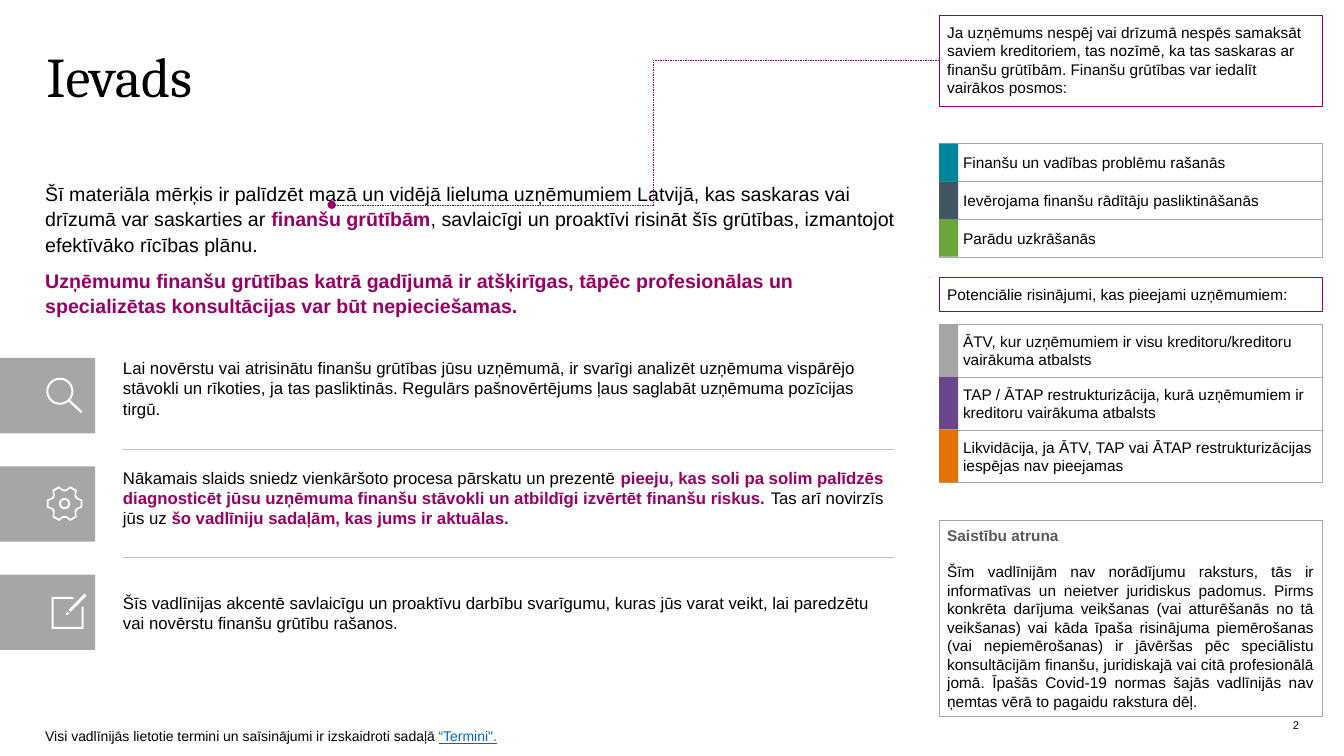
from dataclasses import dataclass
from math import cos, radians, sin

from lxml import etree
from pptx import Presentation
from pptx import util as u
from pptx.dml.color import RGBColor
from pptx.enum import dml, shapes, text
from pptx.oxml import ns
from pptx.util import Cm


@dataclass(frozen=True)
class Theme:
    heading: str = "Cambria"
    body: str = "Arial"
    black: str = "000000"
    white: str = "FFFFFF"
    accent: str = "990066"
    link: str = "0563C1"
    muted: str = "595959"
    tile: str = "A6A6A6"
    rule: str = "BFBFBF"
    title_size: float = 40
    lead_size: float = 14
    row_size: float = 12
    side_size: float = 11
    foot_size: float = 10
    number_size: float = 8
    hairline: float = 0.25


THEME = Theme()
SIDE_LEFT, SIDE_WIDTH, STRIP_WIDTH = 23.67, 9.65, 0.48
ROW_TOP, ROW_PITCH, TILE_WIDTH, TILE_HEIGHT = 9.02, 2.73, 2.4, 1.9
ROW_LEFT, ROW_WIDTH = 3.1, 19.43

STAGES = [
    ("Finanšu un vadības problēmu rašanās", "01859C"),
    ("Ievērojama finanšu rādītāju pasliktināšanās", "425563"),
    ("Parādu uzkrāšanās", "6BA439"),
]
SOLUTIONS = [
    ("ĀTV, kur uzņēmumiem ir visu kreditoru/kreditoru vairākuma atbalsts", "A5A5A5"),
    ("TAP / ĀTAP restrukturizācija, kurā uzņēmumiem ir kreditoru vairākuma atbalsts", "68478C"),
    ("Likvidācija, ja ĀTV, TAP vai ĀTAP restrukturizācijas iespējas nav pieejamas", "E57100"),
]
# Asterisks enclose emphasised words
LEAD = [
    "Šī materiāla mērķis ir palīdzēt mazā un vidējā lieluma uzņēmumiem Latvijā, kas saskaras vai "
    "drīzumā var saskarties ar *finanšu grūtībām*, savlaicīgi un proaktīvi risināt šīs grūtības, "
    "izmantojot efektīvāko rīcības plānu.",
    "*Uzņēmumu finanšu grūtības katrā gadījumā ir atšķirīgas, tāpēc profesionālas un "
    "specializētas konsultācijas var būt nepieciešamas.*",
]
ROWS = [  # text, top, height
    ("Lai novērstu vai atrisinātu finanšu grūtības jūsu uzņēmumā, ir svarīgi analizēt uzņēmuma "
     "vispārējo stāvokli un rīkoties, ja tas pasliktinās. Regulārs pašnovērtējums ļaus saglabāt "
     "uzņēmuma pozīcijas tirgū.", 9.02, 1.55),
    ("Nākamais slaids sniedz vienkāršoto procesa pārskatu un prezentē *pieeju, kas soli pa solim "
     "palīdzēs diagnosticēt jūsu uzņēmuma finanšu stāvokli un atbildīgi izvērtēt finanšu riskus. *"
     "Tas arī novirzīs jūs uz *šo vadlīniju sadaļām, kas jums ir aktuālas.*", 11.79, 1.55),
    ("Šīs vadlīnijas akcentē savlaicīgu un proaktīvu darbību svarīgumu, kuras jūs varat veikt, "
     "lai paredzētu vai novērstu finanšu grūtību rašanos.", 14.94, 1.02),
]
DISCLAIMER = [
    "*Saistību atruna*",
    "Šīm vadlīnijām nav norādījumu raksturs, tās ir informatīvas un neietver juridiskus padomus. "
    "Pirms konkrēta darījuma veikšanas (vai atturēšanās no tā veikšanas) vai kāda īpaša risinājuma "
    "piemērošanas (vai nepiemērošanas) ir jāvēršas pēc speciālistu konsultācijām finanšu, "
    "juridiskajā vai citā profesionālā jomā. Īpašās Covid-19 normas šajās vadlīnijās nav ņemtas "
    "vērā to pagaidu rakstura dēļ.",
]


def colour(code):
    return RGBColor.from_string(code)


def write(box, paragraphs, size, margins=(0, 0, 0, 0), anchor="TOP", align="LEFT", spacing=1.0,
          gap=0, font=THEME.body, mark=THEME.accent, bold=True, underline=False):
    """Fill a box; the words between asterisks take the mark colour."""
    frame = box.text_frame
    frame.word_wrap = True
    frame.vertical_anchor = text.MSO_ANCHOR[anchor]
    frame.margin_left, frame.margin_top, frame.margin_right, frame.margin_bottom = map(Cm, margins)
    for index, content in enumerate(paragraphs):
        para = frame.add_paragraph() if index else frame.paragraphs[0]
        para.alignment = text.PP_ALIGN[align]
        para.line_spacing = spacing
        para.space_before = u.Pt(gap if index else 0)
        for order, words in enumerate(content.split("*")):
            if not words:
                continue
            marked = order % 2 == 1
            span = para.add_run()
            span.text = words
            span.font.name, span.font.size = font, u.Pt(size)
            span.font.bold = marked and bold
            span.font.underline = marked and underline
            span.font.color.rgb = colour(mark if marked else THEME.black)


def add_text(page, left, top, width, height, paragraphs, size, **style):
    box = page.shapes.add_textbox(Cm(left), Cm(top), Cm(width), Cm(height))
    write(box, paragraphs, size, **style)


def paint(shape, fill):
    shape.shadow.inherit = False
    shape.fill.solid()
    shape.fill.fore_color.rgb = colour(fill)
    shape.line.fill.background()


def add_block(page, left, top, width, height, fill):
    block = page.shapes.add_shape(shapes.MSO_SHAPE.RECTANGLE, Cm(left), Cm(top), Cm(width), Cm(height))
    paint(block, fill)
    return block


def add_panel(page, top, height, border, paragraphs, margins=(0.2, 0.2, 0.2, 0.2), **style):
    panel = add_block(page, SIDE_LEFT, top, SIDE_WIDTH, height, THEME.white)
    white = panel.element.spPr.find(ns.qn("a:solidFill"))[0]
    etree.SubElement(white, ns.qn("a:alpha"), val="80000")
    panel.line.color.rgb = colour(border)
    panel.line.width = u.Pt(THEME.hairline)
    write(panel, paragraphs, THEME.side_size, margins=margins, **style)


def add_key(page, top, pitch, entries):
    for index, (label, fill) in enumerate(entries):
        y = top + index * pitch
        add_panel(page, y, pitch, THEME.tile, [label], (0.6, 0.2, 0.2, 0.2), anchor="MIDDLE")
        add_block(page, SIDE_LEFT, y, STRIP_WIDTH, pitch, fill)


def add_line(page, kind, start, end, line_colour):
    line = page.shapes.add_connector(shapes.MSO_CONNECTOR[kind], *map(Cm, start + end))
    line.line.color.rgb = colour(line_colour)
    line.line.width = u.Pt(THEME.hairline)
    etree.SubElement(line.element.spPr, ns.qn("a:effectLst"))
    return line


def add_callout(page, start, end):
    callout = add_line(page, "ELBOW", start, end, THEME.accent)
    callout.line.dash_style = dml.MSO_LINE.DASH
    etree.SubElement(callout.line._get_or_add_ln(), ns.qn("a:tailEnd"), type="oval")
    geometry = callout.element.spPr.find(ns.qn("a:prstGeom"))
    guides = geometry.find(ns.qn("a:avLst"))
    if guides is None:
        guides = etree.SubElement(geometry, ns.qn("a:avLst"))
    etree.SubElement(guides, ns.qn("a:gd"), name="adj1", fmla="val 47100")


def polar(centre, radius, angle):
    return (centre[0] + radius * cos(radians(angle)), centre[1] + radius * sin(radians(angle)))


def arc(centre, radius, first=0, last=360):
    return [polar(centre, radius, angle) for angle in range(first, last + 1, 5)]


def magnifier():
    lens = (1.51, 0.84)
    return [arc(lens, 0.34, 50, 400) + [(2.08, 1.35), (2.04, 1.39)], arc(lens, 0.29)]


def gear():
    hub = (1.63, 0.94)

    def teeth(tip, root, spread):
        corners = [(root, -23), (tip, -spread), (tip, spread), (root, 23)]
        return [polar(hub, radius, turn + angle) for turn in range(0, 360, 60) for radius, angle in corners]

    return [teeth(0.46, 0.36, 12), teeth(0.41, 0.31, 10), arc(hub, 0.14), arc(hub, 0.09)]


def notepad():
    sheet = [(2.06, 1.32), (1.35, 1.32), (1.35, 0.61), (1.85, 0.61), (1.85, 0.56), (1.3, 0.56),
             (1.3, 1.37), (2.11, 1.37), (2.11, 0.81), (2.06, 0.81)]
    pencil = [(2.13, 0.48), (2.18, 0.53), (1.78, 0.94), (1.73, 0.89)]
    nib = [(1.7, 0.94), (1.75, 0.98), (1.68, 1.02), (1.65, 0.99)]
    return [sheet, pencil, nib]


def add_icon(page, top, contours):
    outlines = [[(Cm(x), Cm(top + y)) for x, y in contour] for contour in contours]
    builder = page.shapes.build_freeform(*outlines[0][0])
    for outline in outlines:
        builder.move_to(*outline[0])
        builder.add_line_segments(outline[1:], close=True)
    paint(builder.convert_to_shape(), THEME.white)


def main():
    deck = Presentation()
    deck.slide_width, deck.slide_height = Cm(33.87), Cm(19.05)
    page = deck.slides.add_slide(deck.slide_layouts[6])

    # Title and introduction
    add_text(page, 1.17, 0.91, 31.57, 3.66, ["Ievads"], THEME.title_size, margins=(0, 0.34, 0, 0),
             spacing=0.9, font=THEME.heading)
    add_text(page, 1.14, 4.55, 21.97, 3.43, LEAD, THEME.lead_size, spacing=1.07, gap=8)

    # Rows with icons and rules between them
    for index, ((content, top, height), icon) in enumerate(zip(ROWS, (magnifier, gear, notepad))):
        tile_top = ROW_TOP + index * ROW_PITCH
        add_block(page, 0, tile_top, TILE_WIDTH, TILE_HEIGHT, THEME.tile)
        add_icon(page, tile_top, icon())
        add_text(page, ROW_LEFT, top, ROW_WIDTH, height, [content], THEME.row_size)
        if index:
            y = tile_top - 0.43
            add_line(page, "STRAIGHT", (ROW_LEFT, y), (ROW_LEFT + ROW_WIDTH, y), THEME.rule)

    # Sidebar
    add_panel(page, 0.38, 2.3, THEME.accent, [
        "Ja uzņēmums nespēj vai drīzumā nespēs samaksāt saviem kreditoriem, tas nozīmē, ka tas "
        "saskaras ar finanšu grūtībām. Finanšu grūtības var iedalīt vairākos posmos:"])
    add_callout(page, (SIDE_LEFT, 1.52), (8.36, 5.16))
    add_key(page, 3.62, 0.95, STAGES)
    add_panel(page, 6.98, 0.87, THEME.accent, ["Potenciālie risinājumi, kas pieejami uzņēmumiem:"])
    add_key(page, 8.17, 1.33, SOLUTIONS)
    add_panel(page, 13.1, 4.95, THEME.tile, DISCLAIMER, (0.2, 0.1, 0.2, 0.1),
              anchor="MIDDLE", align="JUSTIFY", gap=12.65, mark=THEME.muted)

    # Footer
    add_text(page, 25.12, 18.1, 7.62, 0.33, ["2"], THEME.number_size, anchor="MIDDLE", align="RIGHT")
    add_text(page, 1.14, 18.3, 21.41, 0.43,
             ["Visi vadlīnijās lietotie termini un saīsinājumi ir izskaidroti sadaļā *“Termini\".*"],
             THEME.foot_size, spacing=1.07, mark=THEME.link, bold=False, underline=True)

    deck.save("out.pptx")


if __name__ == "__main__":
    main()
